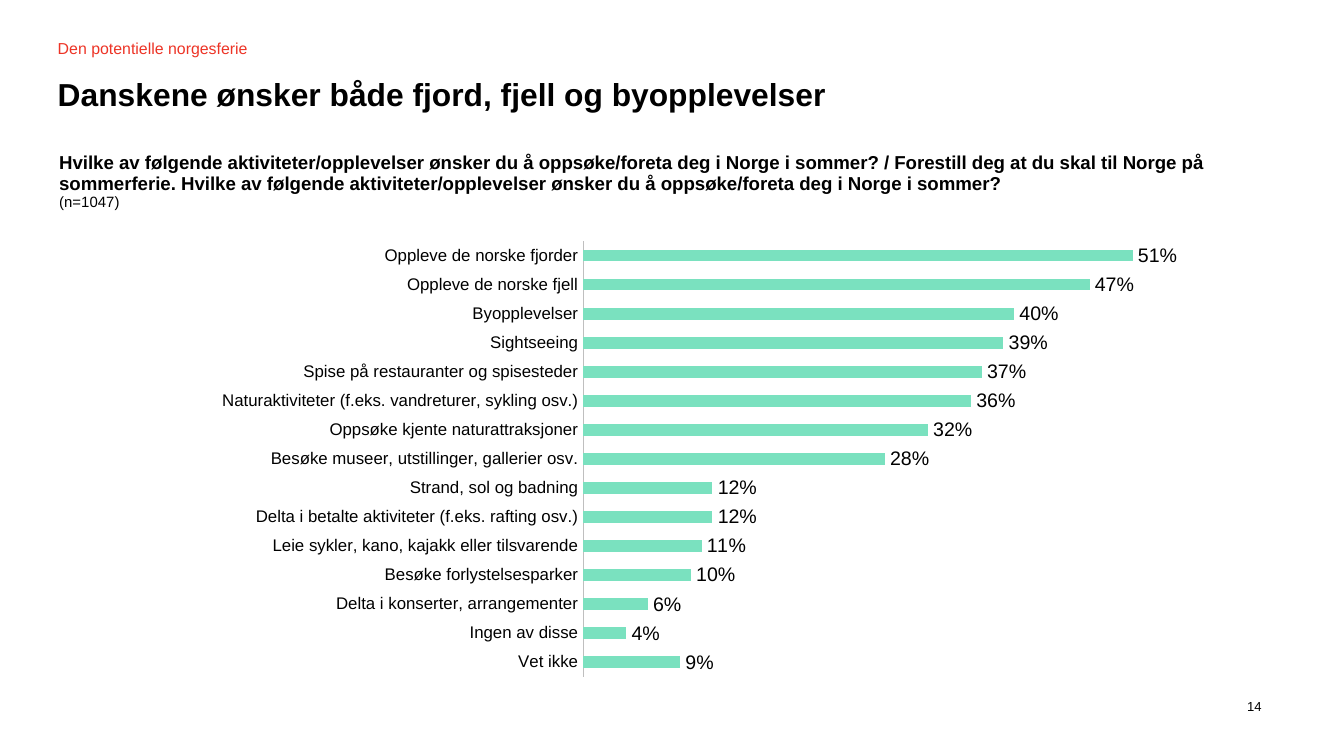
from lxml import etree
from pptx import Presentation
from pptx.chart.data import CategoryChartData
from pptx.dml.color import RGBColor
from pptx.enum.chart import XL_CHART_TYPE, XL_LABEL_POSITION, XL_TICK_LABEL_POSITION, XL_TICK_MARK
from pptx.enum.shapes import MSO_SHAPE
from pptx.enum.text import MSO_ANCHOR, PP_ALIGN
from pptx.oxml import parse_xml
from pptx.oxml.ns import nsdecls, qn
from pptx.util import Inches, Pt

BAR = XL_CHART_TYPE.BAR_CLUSTERED
OUTSIDE = XL_LABEL_POSITION.OUTSIDE_END
NEXT_TO_AXIS = XL_TICK_LABEL_POSITION.NEXT_TO_AXIS
NO_TICK = XL_TICK_MARK.NONE
RECT = MSO_SHAPE.RECTANGLE
TOP, LEFT = MSO_ANCHOR.TOP, PP_ALIGN.LEFT

BLACK = RGBColor(0x00, 0x00, 0x00)
WHITE = RGBColor(0xFF, 0xFF, 0xFF)
RED = RGBColor(0xED, 0x34, 0x26)
MINT = RGBColor(0x7A, 0xE1, 0xBF)
GREY = RGBColor(0xBF, 0xBF, 0xBF)

FONT = "Arial"
COLS, ROWS = 100, 56.25  # grid of square cells, a tenth of an inch each
CELL = Inches(0.1)
MARGIN = 4.3
CONTENT = COLS - 2 * MARGIN

QUESTION = (
    "Hvilke av følgende aktiviteter/opplevelser ønsker du å oppsøke/foreta deg i Norge i sommer? / "
    "Forestill deg at du skal til Norge på sommerferie. Hvilke av følgende "
    "aktiviteter/opplevelser ønsker du å oppsøke/foreta deg i Norge i sommer?"
)
ACTIVITIES = [  # from top to bottom
    ("Oppleve de norske fjorder", 0.51),
    ("Oppleve de norske fjell", 0.47),
    ("Byopplevelser", 0.40),
    ("Sightseeing", 0.39),
    ("Spise på restauranter og spisesteder", 0.37),
    ("Naturaktiviteter (f.eks. vandreturer, sykling osv.)", 0.36),
    ("Oppsøke kjente naturattraksjoner", 0.32),
    ("Besøke museer, utstillinger, gallerier osv.", 0.28),
    ("Strand, sol og badning", 0.12),
    ("Delta i betalte aktiviteter (f.eks. rafting osv.)", 0.12),
    ("Leie sykler, kano, kajakk eller tilsvarende", 0.11),
    ("Besøke forlystelsesparker", 0.10),
    ("Delta i konserter, arrangementer", 0.06),
    ("Ingen av disse", 0.04),
    ("Vet ikke", 0.09),
]


def style_font(font, size, color=BLACK, bold=False):
    font.name, font.size, font.bold = FONT, Pt(size), bold
    font.color.rgb = color


def write(p, text, size, color=BLACK, bold=False, spacing=None):
    p.alignment = LEFT
    if spacing:
        p.line_spacing = spacing
    r = p.add_run()
    r.text = text
    style_font(r.font, size, color, bold)


def cells(*lengths):
    return [round(n * CELL) for n in lengths]


class Deck:
    def __init__(self):
        self.prs = Presentation()
        self.prs.slide_width, self.prs.slide_height = cells(COLS, ROWS)
        self.slide = self.prs.slides.add_slide(self.prs.slide_layouts[6])

    def frame(self, s, wrap):
        tf = s.text_frame
        tf.margin_left = tf.margin_right = tf.margin_top = tf.margin_bottom = 0
        tf.word_wrap = wrap
        tf.vertical_anchor = TOP
        return tf.paragraphs[0]

    def label(self, box, text, size, **fmt):
        s = self.slide.shapes.add_textbox(*cells(*box))
        write(self.frame(s, False), text, size, **fmt)

    def title(self, box, text):
        s = self.slide.shapes.add_shape(RECT, *cells(*box))
        s.shadow.inherit = False
        s.fill.solid()
        s.fill.fore_color.rgb = WHITE
        s.line.fill.background()
        write(self.frame(s, True), text, 17, bold=True, spacing=0.95)

    def question_table(self, box, question, base):
        table = self.slide.shapes.add_table(1, 1, *cells(*box)).table
        table.first_row = table.horz_banding = False
        cell = table.cell(0, 0)
        cell.margin_left = cell.margin_right = cell.margin_top = 0
        cell.margin_bottom = Inches(0.08)
        cell.vertical_anchor = TOP
        tf = cell.text_frame
        write(tf.paragraphs[0], question, 10, bold=True)
        write(tf.add_paragraph(), base, 8)
        props = cell._tc.get_or_add_tcPr()
        for side in ("lnL", "lnR", "lnT", "lnB"):
            props.append(parse_xml(
                f'<a:{side} {nsdecls("a")} w="{Pt(1)}"><a:solidFill>'
                f'<a:srgbClr val="{WHITE}"/></a:solidFill></a:{side}>'))
        cell.fill.background()

    def bar_chart(self, box, rows, plot):
        data = CategoryChartData(number_format="###0%")
        data.categories = [name for name, _ in reversed(rows)]
        data.add_series("Series 1", [share for _, share in reversed(rows)])
        chart = self.slide.shapes.add_chart(BAR, *cells(*box), data).chart
        chart.has_legend = chart.has_title = False
        style_font(chart.font, 10.5)

        bars = chart.plots[0]
        bars.gap_width = 150
        bars.vary_by_categories = False
        fill = bars.series[0].format.fill
        fill.solid()
        fill.fore_color.rgb = MINT
        labels = bars.series[0].data_labels
        labels.show_value = True
        labels.position = OUTSIDE
        labels.number_format, labels.number_format_is_linked = "###0%", False
        style_font(labels.font, 10.5)

        names = chart.category_axis
        names.major_tick_mark = names.minor_tick_mark = NO_TICK
        names.tick_label_position = NEXT_TO_AXIS
        names.format.line.color.rgb = GREY
        names.format.line.width = Pt(0.75)
        style_font(names.tick_labels.font, 9)
        scale = chart.value_axis
        scale.minimum_scale, scale.maximum_scale, scale.major_unit = 0, 0.6, 0.2
        scale.major_tick_mark = scale.minor_tick_mark = NO_TICK
        scale.has_major_gridlines = False
        scale.visible = False
        self.place_plot(chart, box, plot)

    def place_plot(self, chart, box, plot):
        """Fix the inner plot area, given in grid cells from the chart's corner."""
        area = chart.plots[0]._element.getparent()
        for old in area.findall(qn("c:layout")):
            area.remove(old)
        layout = etree.Element(qn("c:layout"))
        manual = etree.SubElement(layout, qn("c:manualLayout"))
        shares = [length / whole for length, whole in zip(plot, box[2:] * 2)]
        values = [("layoutTarget", "inner"), ("xMode", "edge"), ("yMode", "edge")]
        for tag, value in values + list(zip("xywh", shares)):
            etree.SubElement(manual, qn(f"c:{tag}"), val=str(value))
        area.insert(0, layout)


def main():
    deck = Deck()
    deck.label((92.8, 52, 2.8, 1.2), "14", 7)
    deck.label((MARGIN, 2.9, 14.3, 1.9), "Den potentielle norgesferie", 8.5, color=RED)
    deck.title((MARGIN, 5.74, CONTENT, 8.2), "Danskene ønsker både fjord, fjell og byopplevelser")
    deck.question_table((4.4, 11.34, 91.1, 5.5), QUESTION, "(n=1047)")
    deck.bar_chart((MARGIN, 16.7, CONTENT, 33.7), ACTIVITIES, (39.1, 1.25, 48.1, 32.4))
    deck.prs.save("out.pptx")


if __name__ == "__main__":
    main()
